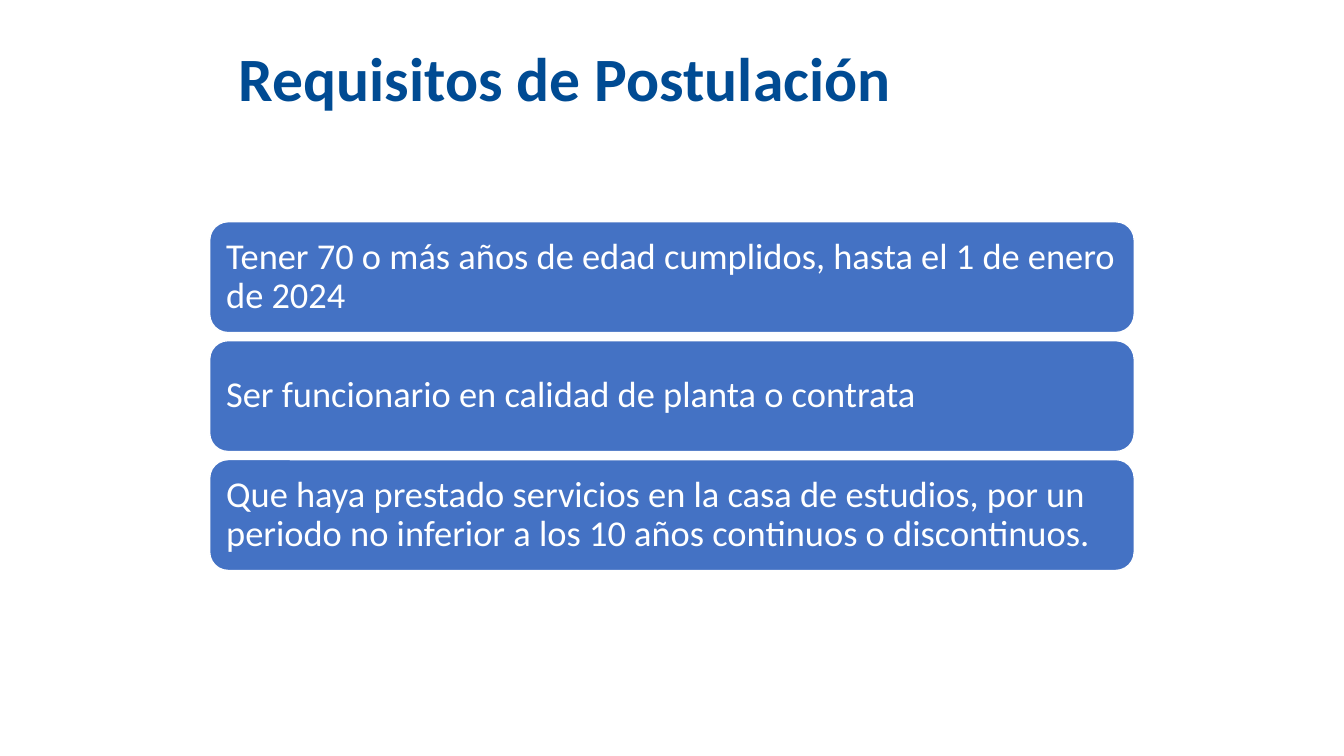
"""Build the slide that lists the application requirements."""
from pptx import Presentation
from pptx.dml.color import RGBColor
from pptx.enum.shapes import MSO_SHAPE
from pptx.enum.text import MSO_ANCHOR, PP_ALIGN
from pptx.util import Inches, Pt

TITLE = "Requisitos de Postulación"
REQUIREMENTS = [
    "Tener 70 o más años de edad cumplidos, hasta el 1 de enero de 2024",
    "Ser funcionario en calidad de planta o contrata",
    "Que haya prestado servicios en la casa de estudios, por un periodo "
    "no inferior a los 10 años continuos o discontinuos.",
]
NAVY = RGBColor(0x00, 0x4B, 0x93)
BLUE = RGBColor(0x44, 0x72, 0xC4)
WHITE = RGBColor(0xFF, 0xFF, 0xFF)
LEFT, TOP, WIDTH, HEIGHT, PITCH = 2.08, 2.2, 9.17, 1.1, 1.18
INSET = Inches(0.11)


def write(tf, text, size, color, bold=False):
    tf.text = text
    tf.word_wrap = True
    tf.vertical_anchor = MSO_ANCHOR.MIDDLE
    p = tf.paragraphs[0]
    p.alignment = PP_ALIGN.LEFT
    p.line_spacing = 0.9
    font = p.runs[0].font
    font.name, font.size, font.bold = "Calibri", Pt(size), bold
    font.color.rgb = color


def add_requirement(s, index, text):
    box = s.shapes.add_shape(
        MSO_SHAPE.ROUNDED_RECTANGLE, Inches(LEFT), Inches(TOP + index * PITCH),
        Inches(WIDTH), Inches(HEIGHT))
    box.shadow.inherit = False
    box.fill.solid()
    box.fill.fore_color.rgb = BLUE
    box.line.color.rgb = WHITE
    box.line.width = Pt(1)
    tf = box.text_frame
    tf.margin_left = tf.margin_right = tf.margin_top = tf.margin_bottom = INSET
    write(tf, text, 26, WHITE)


def main():
    prs = Presentation()
    prs.slide_width, prs.slide_height = Inches(13.33), Inches(7.5)
    s = prs.slides.add_slide(prs.slide_layouts[5])
    title = s.shapes.title
    title.left, title.top = Inches(2.27), Inches(0.44)
    title.width, title.height = Inches(9.17), Inches(0.74)
    write(title.text_frame, TITLE, 44, NAVY, bold=True)
    for index, text in enumerate(REQUIREMENTS):
        add_requirement(s, index, text)
    prs.save("out.pptx")


if __name__ == "__main__":
    main()
